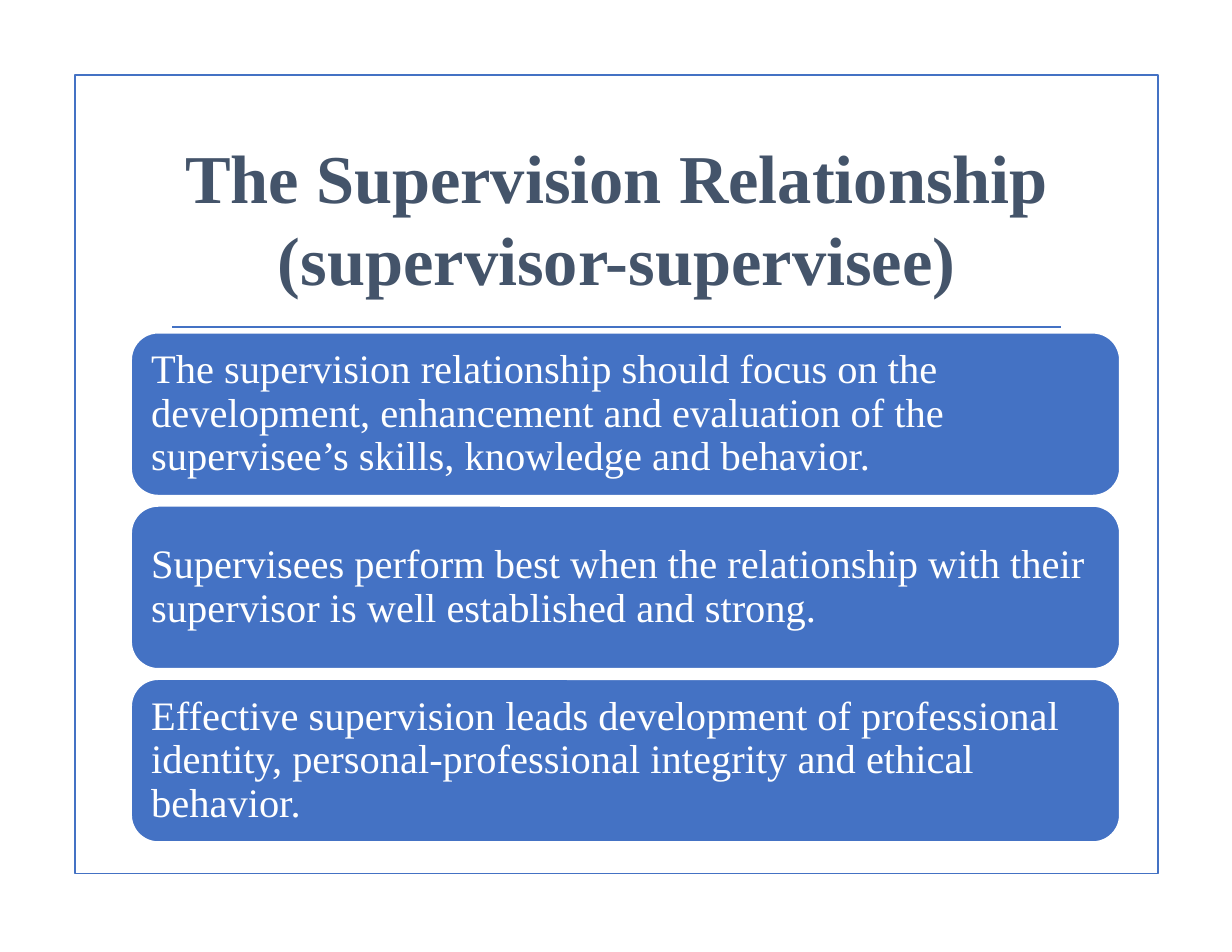
from lxml import etree
from pptx import Presentation
from pptx import util as u
from pptx.dml.color import RGBColor
from pptx.enum import shapes, text
from pptx.oxml import ns

BLUE, SLATE, WHITE = "4472C4", "44546A", "FFFFFF"
FONT = "Times New Roman"
POINTS = [
    "The supervision relationship should focus on the development, "
    "enhancement and evaluation of the supervisee’s skills, knowledge and behavior.",
    "Supervisees perform best when the relationship with their supervisor "
    "is well established and strong.",
    "Effective supervision leads development of professional identity, "
    "personal-professional integrity and ethical behavior.",
]


def paint(color, value):
    """Set a colour format from a hex string."""
    color.rgb = RGBColor.from_string(value)


def outline(shape, value):
    """Give a shape or connector a thin solid line."""
    paint(shape.line.color, value)
    shape.line.width = u.Pt(1.25)


def write(frame, words, size, color, align, bold=False):
    """Fill a text frame with one vertically centred paragraph."""
    frame.word_wrap = True
    frame.vertical_anchor = text.MSO_ANCHOR.MIDDLE
    para = frame.paragraphs[0]
    para.text = words
    para.alignment = align
    para.font.name = FONT
    para.font.size = u.Pt(size)
    para.font.bold = bold
    paint(para.font.color, color)
    return para


def add_frame(page, left, top, width, height):
    """Draw the border around the page."""
    border = page.shapes.add_shape(
        shapes.MSO_SHAPE.RECTANGLE,
        u.Inches(left), u.Inches(top), u.Inches(width), u.Inches(height))
    border.shadow.inherit = False
    border.fill.background()
    outline(border, BLUE)


def add_heading(page, left, top, width, height):
    """Place the title with a rule beneath it."""
    box = page.shapes.add_textbox(
        u.Inches(left), u.Inches(top), u.Inches(width), u.Inches(height))
    write(box.text_frame, "The Supervision Relationship (supervisor-supervisee)",
          44, SLATE, text.PP_ALIGN.CENTER, bold=True)
    rule_top = u.Inches(top + height + 0.17)
    rule = page.shapes.add_connector(
        shapes.MSO_CONNECTOR.STRAIGHT,
        u.Inches(left + 0.12), rule_top, u.Inches(left + width - 0.13), rule_top)
    outline(rule, BLUE)
    etree.SubElement(rule._element.spPr, ns.qn("a:effectLst"))


def add_points(page, left, top, width, height, gap=0.09):
    """Stack the rounded statement cards evenly in the given box."""
    card_height = (height - gap * (len(POINTS) - 1)) / len(POINTS)
    for index, words in enumerate(POINTS):
        card = page.shapes.add_shape(
            shapes.MSO_SHAPE.ROUNDED_RECTANGLE,
            u.Inches(left), u.Inches(top + index * (card_height + gap)),
            u.Inches(width), u.Inches(card_height))
        card.shadow.inherit = False
        card.fill.solid()
        paint(card.fill.fore_color, BLUE)
        outline(card, WHITE)
        frame = card.text_frame
        frame.margin_left = frame.margin_right = u.Inches(0.11)
        frame.margin_top = frame.margin_bottom = u.Inches(0.11)
        para = write(frame, words, 26, WHITE, text.PP_ALIGN.LEFT)
        para.line_spacing = 0.9


def main():
    """Build and save the slide."""
    deck = Presentation()
    deck.slide_width, deck.slide_height = u.Inches(11), u.Inches(8.5)
    page = deck.slides.add_slide(deck.slide_layouts[6])
    add_frame(page, 0.67, 0.67, 9.67, 7.13)
    add_heading(page, 1.42, 1.13, 8.18, 1.62)
    add_points(page, 1.17, 2.97, 8.83, 4.55)
    deck.save("out.pptx")


if __name__ == "__main__":
    main()
